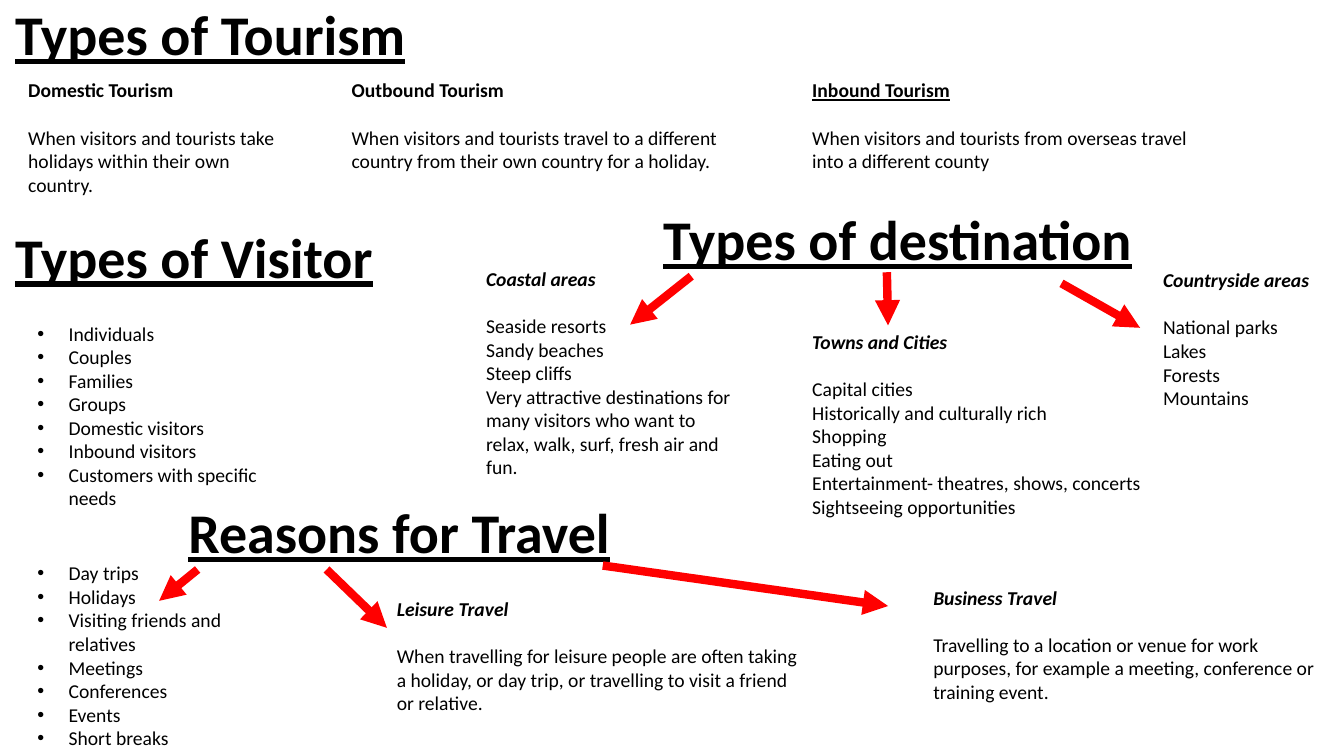
from dataclasses import dataclass

from lxml.etree import SubElement
from pptx import Presentation
from pptx.dml.color import RGBColor
from pptx.enum.shapes import MSO_CONNECTOR
from pptx.enum.text import MSO_ANCHOR, MSO_AUTO_SIZE
from pptx.oxml.ns import qn
from pptx.util import Cm, Pt


@dataclass(frozen=True)
class Theme:
    font: str = "Calibri"
    text: RGBColor = RGBColor(0, 0, 0)
    arrow: RGBColor = RGBColor(255, 0, 0)
    heading_size: Pt = Pt(40)
    body_size: Pt = Pt(14)
    label_gap: Pt = Pt(17)
    arrow_width: Pt = Pt(6)


@dataclass(frozen=True)
class Box:
    """A place on the slide, in centimetres."""
    left: float
    top: float
    width: float = 0
    height: float = 0

    def inside(self, left, top, width=0, height=0):
        return Box(self.left + left, self.top + top, width, height)

    def lengths(self):
        return Cm(self.left), Cm(self.top), Cm(self.width), Cm(self.height)


THEME = Theme()
HEADING = (31.45, 3.68)
LIST = (6.91, 5.05)


# Shared parts
def add_text(slide, box, lines, size):
    """Adds a text box and returns its frame."""
    frame = slide.shapes.add_textbox(*box.lengths()).text_frame
    frame.word_wrap = True
    frame.text = "\n".join(lines)
    for paragraph in frame.paragraphs:
        paragraph.font.name = THEME.font
        paragraph.font.size = size
        paragraph.font.color.rgb = THEME.text
    return frame


def add_heading(slide, box, text):
    frame = add_text(slide, box, [text], THEME.heading_size)
    frame.vertical_anchor = MSO_ANCHOR.MIDDLE
    paragraph = frame.paragraphs[0]
    paragraph.line_spacing = 0.9
    paragraph.font.bold = paragraph.font.underline = True


def add_note(slide, box, label, lines, italic=False, underline=False):
    frame = add_text(slide, box, [label, *lines], THEME.body_size)
    frame.auto_size = MSO_AUTO_SIZE.SHAPE_TO_FIT_TEXT
    paragraph = frame.paragraphs[0]
    paragraph.space_after = THEME.label_gap
    paragraph.font.bold = True
    paragraph.font.italic = italic
    paragraph.font.underline = underline


def add_bullets(slide, box, lines):
    frame = add_text(slide, box, lines, THEME.body_size)
    frame.auto_size = MSO_AUTO_SIZE.SHAPE_TO_FIT_TEXT
    indent = Cm(0.79)
    for paragraph in frame.paragraphs:
        properties = paragraph._p.get_or_add_pPr()
        properties.set("marL", str(indent))
        properties.set("indent", str(-indent))
        bullet_font = properties.makeelement(qn("a:buFont"), {"typeface": "Arial"})
        bullet = properties.makeelement(qn("a:buChar"), {"char": "•"})
        properties.insert(0, bullet_font)
        properties.insert(1, bullet)


def add_arrow(slide, start, end):
    connector = slide.shapes.add_connector(
        MSO_CONNECTOR.STRAIGHT,
        Cm(start.left), Cm(start.top), Cm(end.left), Cm(end.top))
    connector.line.color.rgb = THEME.arrow
    connector.line.width = THEME.arrow_width
    SubElement(connector.line._get_or_add_ln(), qn("a:tailEnd"), type="triangle")
    SubElement(connector._element.spPr, qn("a:effectLst"))


def add_arrows(slide, box, ends):
    for start, end in ends:
        add_arrow(slide, box.inside(*start), box.inside(*end))


# Regions
def add_tourism(slide, box):
    add_heading(slide, box.inside(0, 0, *HEADING), "Types of Tourism")
    notes = [
        (0.33, 6.91, "Domestic Tourism", False,
         "When visitors and tourists take holidays within their own country."),
        (8.48, 10.87, "Outbound Tourism", False,
         "When visitors and tourists travel to a different country from their "
         "own country for a holiday."),
        (20.09, 10.62, "Inbound Tourism", True,
         "When visitors and tourists from overseas travel into a different county"),
    ]
    for left, width, label, underline, text in notes:
        add_note(slide, box.inside(left, 2.74, width, 3.43), label, [text],
                 underline=underline)


def add_visitors(slide, box):
    add_heading(slide, box.inside(0, 0, *HEADING), "Types of Visitor")
    add_bullets(slide, box.inside(0.56, 3.26, *LIST), [
        "Individuals", "Couples", "Families", "Groups", "Domestic visitors",
        "Inbound visitors", "Customers with specific needs"])


def add_destinations(slide, box):
    add_heading(slide, box.inside(4.46, 0, *HEADING), "Types of destination")
    notes = [
        ((0, 2.33, 6.91, 5.64), "Coastal areas", [
            "Seaside resorts", "Sandy beaches", "Steep cliffs",
            "Very attractive destinations for many visitors who want to relax, "
            "walk, surf, fresh air and fun."]),
        ((8.22, 3.91, 12.62, 6.25), "Towns and Cities", [
            "Capital cities", "Historically and culturally rich", "Shopping",
            "Eating out", "Entertainment- theatres, shows, concerts",
            "Sightseeing opportunities"]),
        ((17.06, 2.36, 6.91, 5.05), "Countryside areas", [
            "National parks", "Lakes", "Forests", "Mountains"]),
    ]
    for place, label, lines in notes:
        add_note(slide, box.inside(*place), label, lines, italic=True)
    add_arrows(slide, box, [
        ((5.42, 2.69), (3.88, 3.91)),
        ((10.35, 2.59), (10.38, 3.93)),
        ((14.75, 2.87), (16.73, 3.99))])


def add_reasons(slide, box):
    add_heading(slide, box.inside(3.81, 0, *HEADING), "Reasons for Travel")
    add_bullets(slide, box.inside(0, 2.36, *LIST), [
        "Day trips", "Holidays", "Visiting friends and relatives", "Meetings",
        "Conferences", "Events", "Short breaks"])
    notes = [
        ((9.06, 3.25, 10.87, 4.01), "Leisure Travel",
         "When travelling for leisure people are often taking a holiday, or day "
         "trip, or travelling to visit a friend or relative."),
        ((22.58, 2.97, 10.62, 4.62), "Business Travel",
         "Travelling to a location or venue for work purposes, for example a "
         "meeting, conference or training event."),
    ]
    for place, label, text in notes:
        add_note(slide, box.inside(*place), label, [text], italic=True)
    add_arrows(slide, box, [
        ((4.29, 2.69), (3.32, 3.48)),
        ((7.54, 2.69), (9.06, 4.16)),
        ((14.5, 2.59), (21.69, 3.61))])


def main():
    presentation = Presentation()
    presentation.slide_width = Cm(33.87)
    presentation.slide_height = Cm(19.05)
    slide = presentation.slides.add_slide(presentation.slide_layouts[6])
    add_tourism(slide, Box(0.13, -0.89))
    add_visitors(slide, Box(0.13, 4.72))
    add_destinations(slide, Box(12, 4.27))
    add_reasons(slide, Box(0.69, 11.66))
    presentation.save("out.pptx")


if __name__ == "__main__":
    main()
